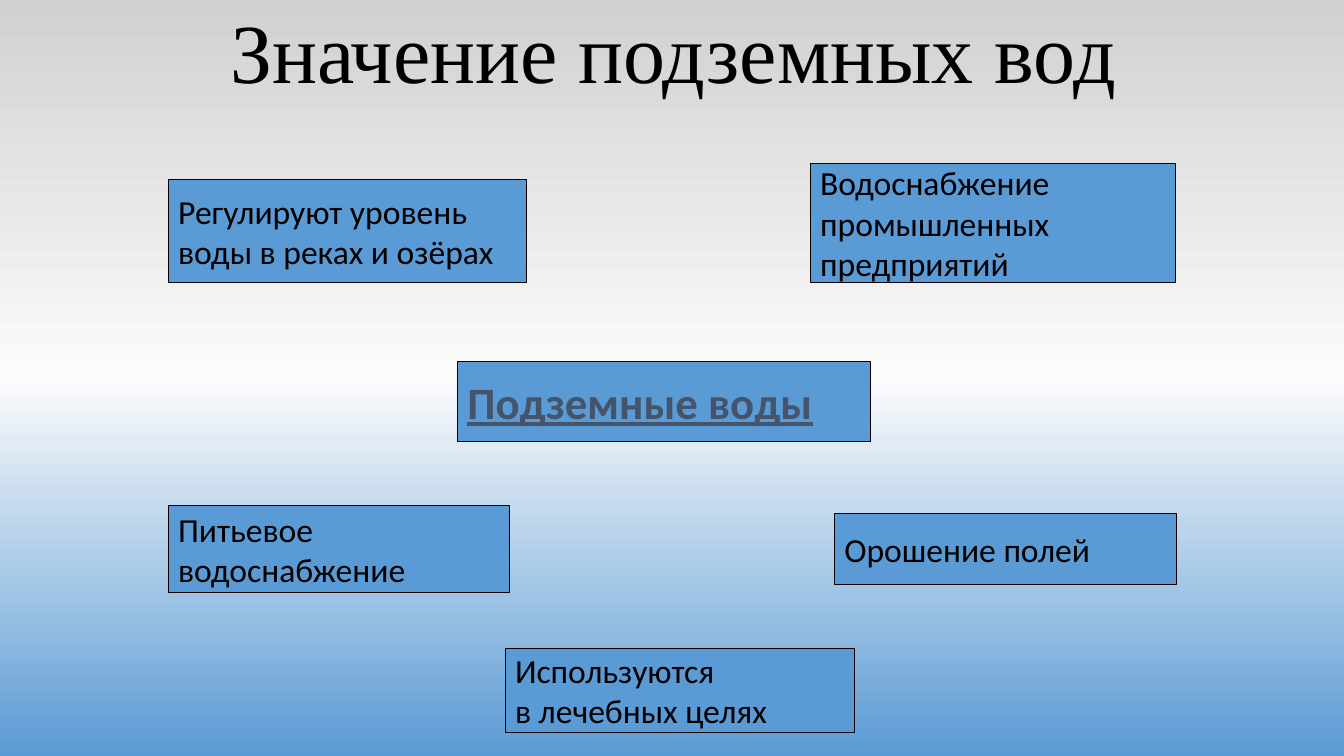
import copy
import pptx
import pptx.dml.color
import pptx.enum.shapes
import pptx.enum.text
import pptx.oxml.ns
import pptx.util

Cm = pptx.util.Cm
Pt = pptx.util.Pt

COLORS = {"blue": "5B9BD5", "white": "FBFBFB", "gray": "D1D1D1",
          "black": "000000", "slate": "44546A"}
GRADIENT = [(0, "blue"), (0.5, "white"), (1, "gray")]

TITLE = ("Значение подземных вод", (5.54, 0.33, 22.86, 2.16))
CENTER = ("Подземные воды", (11.53, 9.12, 10.41, 2.01))
USES = [
    ("Питьевое\nводоснабжение", (4.24, 12.73, 8.61, 2.21)),
    ("Регулируют уровень\nводы в реках и озёрах", (4.24, 4.52, 9.02, 2.59)),
    ("Водоснабжение\nпромышленных\nпредприятий", (20.42, 4.11, 9.2, 3)),
    ("Орошение полей", (21.03, 12.93, 8.61, 1.8)),
    ("Используются\nв лечебных целях", (12.73, 16.33, 8.81, 2.13)),
]


def rgb(name):
    return pptx.dml.color.RGBColor.from_string(COLORS[name])


def write(sp, text, size=24, font="Calibri", color="black", bold=False,
          underline=False, align="LEFT", spacing=1.0):
    tf = sp.text_frame
    tf.word_wrap = True
    tf.vertical_anchor = pptx.enum.text.MSO_ANCHOR.MIDDLE
    for i, line in enumerate(text.split("\n")):
        p = tf.add_paragraph() if i else tf.paragraphs[0]
        p.alignment = getattr(pptx.enum.text.PP_ALIGN, align)
        p.line_spacing = spacing
        r = p.add_run()
        r.text = line
        r.font.size = Pt(size)
        r.font.name = font
        r.font.bold = bold
        r.font.underline = underline
        r.font.color.rgb = rgb(color)


def add_box(s, text, place, **fmt):
    sp = s.shapes.add_shape(pptx.enum.shapes.MSO_SHAPE.RECTANGLE, *map(Cm, place))
    sp.shadow.inherit = False
    sp.fill.solid()
    sp.fill.fore_color.rgb = rgb("blue")
    sp.line.color.rgb = rgb("black")
    sp.line.width = Pt(0.75)
    write(sp, text, **fmt)


def paint_background(s):
    fill = s.background.fill
    fill.gradient()
    fill.gradient_angle = 90
    stops = next(s.element.iter(pptx.oxml.ns.qn("a:gsLst")))
    while len(stops) < len(GRADIENT):
        stops.append(copy.deepcopy(stops[0]))
    for stop, (position, color) in zip(fill.gradient_stops, GRADIENT):
        stop.position = position
        stop.color.rgb = rgb(color)


def main():
    prs = pptx.Presentation()
    prs.slide_width, prs.slide_height = Cm(33.87), Cm(19.05)
    s = prs.slides.add_slide(prs.slide_layouts[6])
    paint_background(s)
    text, place = TITLE
    title = s.shapes.add_textbox(*map(Cm, place))
    write(title, text, size=60, font="Times New Roman", align="CENTER", spacing=0.9)
    add_box(s, *CENTER, size=32, color="slate", bold=True, underline=True)
    for text, place in USES:
        add_box(s, text, place)
    prs.save("out.pptx")


if __name__ == "__main__":
    main()
